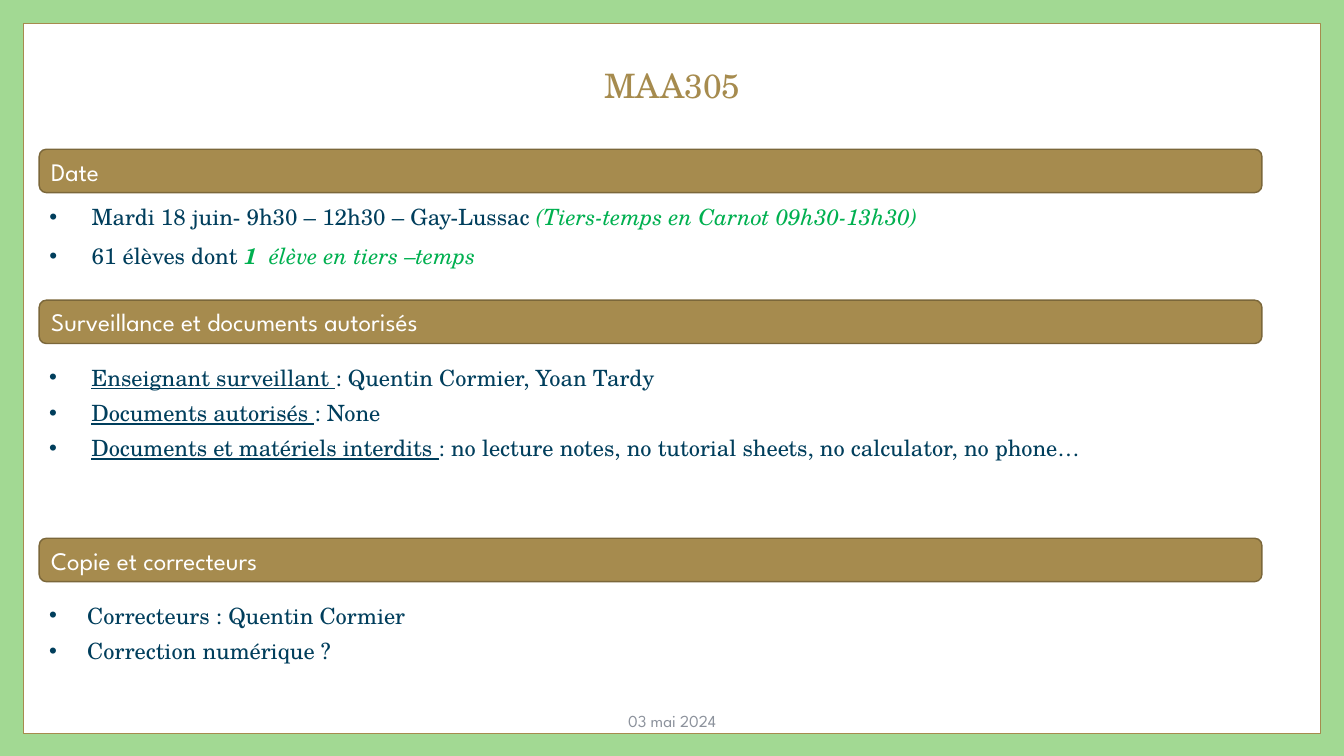
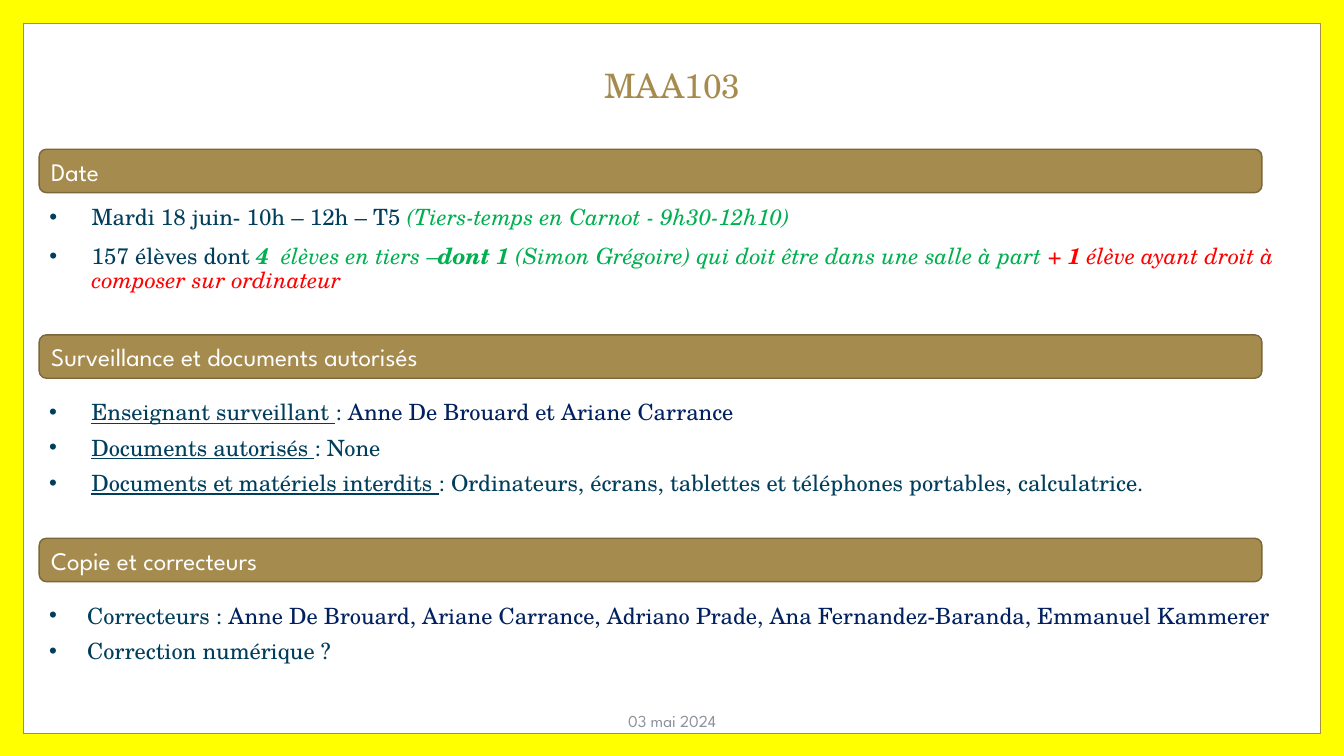
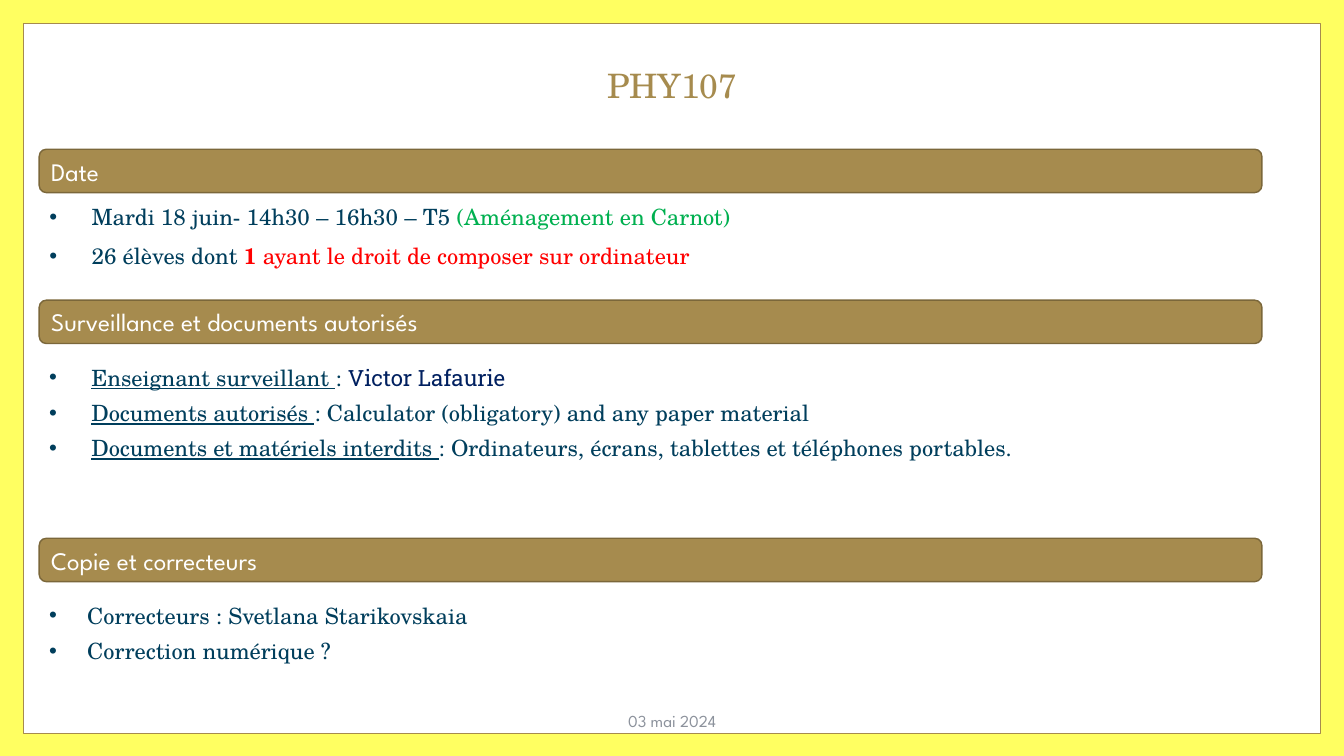
import pptx
import pptx.dml.color
import pptx.enum.shapes
import pptx.enum.text
import pptx.util
from dataclasses import dataclass
from lxml import etree
from typing import NamedTuple

Pt = pptx.util.Pt
ALIGN = pptx.enum.text.PP_ALIGN
ANCHOR = pptx.enum.text.MSO_ANCHOR
SHAPE = pptx.enum.shapes.MSO_SHAPE

COLORS = {
    "gold": "A68B4E",
    "gold_dark": "7B673A",
    "white": "FFFFFF",
    "ink": "003E5C",
    "navy": "002060",
    "green": "00B050",
    "red": "FF0000",
    "grey": "8C929C",
}
SERIF = "TeX Gyre Schola"
SANS = "League Spartan"
BASE = {"name": SERIF, "size": Pt(16), "color": "ink"}
STYLES = {
    "plain": {},
    "label": {"underline": True},
    "navy": {"color": "navy"},
    "navy_slab": {"color": "navy", "name": "Roboto Slab"},
    "green": {"color": "green"},
    "green_it": {"color": "green", "italic": True},
    "green_bold_it": {"color": "green", "italic": True, "bold": True},
    "red": {"color": "red"},
    "red_bold": {"color": "red", "bold": True},
    "red_it": {"color": "red", "italic": True},
    "red_bold_it": {"color": "red", "italic": True, "bold": True},
    "title": {"size": Pt(24), "color": "gold"},
    "band": {"name": SANS, "size": Pt(18), "color": "white"},
    "footer": {"name": SANS, "size": Pt(12), "color": "grey"},
}


class Box(NamedTuple):
    left: float
    top: float
    width: float
    height: float

    def lengths(self) -> list:
        return [Pt(v) for v in self]


class Run(NamedTuple):
    text: str
    style: str = "plain"


@dataclass
class Section:
    heading: str
    drop: float
    left: float
    width: float
    height: float
    margins: tuple
    indent: float
    space: float
    line: float


@dataclass
class Exam:
    code: str
    border: str
    watch_top: float
    date: list
    watch: list
    marking: list


TEXT_MARGINS = (7.2, 3.6, 7.2, 3.6)
DATE = Section("Date", 41, 35.3, 903.6, 124.6, (0, 0, 0, 3.6), 30.2, 10, 0.9)
WATCH = Section("Surveillance et documents autorisés", 41.9, 28, 903.6, 77.8,
                TEXT_MARGINS, 30.2, 6, 1.0)
MARKING = Section("Copie et correcteurs", 41.9, 28, 889.2, 51.8,
                  TEXT_MARGINS, 27.2, 6, 1.0)
DATE_TOP = 106.6
MARKING_TOP = 384.5
FRAME = Box(17, 16.8, 926, 506.9)
TITLE = Box(66.2, 16.8, 828, 91.4)
FOOTER = Box(318.2, 500.4, 324, 28.8)


def rgb(value: str) -> pptx.dml.color.RGBColor:
    return pptx.dml.color.RGBColor.from_string(value)


def add_run(p, run: Run) -> None:
    r = p.add_run()
    r.text = run.text
    for key, value in {**BASE, **STYLES[run.style]}.items():
        if key == "color":
            r.font.color.rgb = rgb(COLORS[value])
        else:
            setattr(r.font, key, value)


def set_frame(tf, **values) -> None:
    for key, value in {"word_wrap": True, **values}.items():
        setattr(tf, key, value)


def add_panel(s, shape: int, box: Box, fill: str, line: str, weight: float):
    sp = s.shapes.add_shape(shape, *box.lengths())
    sp.shadow.inherit = False
    sp.fill.solid()
    sp.fill.fore_color.rgb = rgb(COLORS[fill])
    sp.line.color.rgb = rgb(COLORS[line])
    sp.line.width = Pt(weight)
    return sp


def add_bullet(p, indent: float) -> None:
    pPr = p._p.get_or_add_pPr()
    pPr.set("marL", str(Pt(indent)))
    pPr.set("indent", str(-Pt(indent)))
    ns = pptx.oxml.ns.qn
    etree.SubElement(pPr, ns("a:buFont")).set("typeface", "Arial")
    etree.SubElement(pPr, ns("a:buChar")).set("char", "•")


def add_section(s, section: Section, top: float, items: list) -> None:
    sp = add_panel(s, SHAPE.ROUNDED_RECTANGLE, Box(28, top, 873.4, 31),
                   "gold", "gold_dark", 1)
    set_frame(sp.text_frame, vertical_anchor=ANCHOR.MIDDLE)
    p = sp.text_frame.paragraphs[0]
    p.alignment = ALIGN.LEFT
    add_run(p, Run(section.heading, "band"))

    box = Box(section.left, top + section.drop, section.width, section.height)
    tf = s.shapes.add_textbox(*box.lengths()).text_frame
    sides = ("margin_left", "margin_top", "margin_right", "margin_bottom")
    set_frame(tf, **{k: Pt(v) for k, v in zip(sides, section.margins)})
    for i, runs in enumerate(items):
        p = tf.add_paragraph() if i else tf.paragraphs[0]
        add_bullet(p, section.indent)
        p.line_spacing = section.line
        p.space_before = Pt(section.space if i else 0)
        for run in runs:
            add_run(p, run)


def add_exam(prs, exam: Exam) -> None:
    s = prs.slides.add_slide(prs.slide_layouts[5])
    s.background.fill.solid()
    s.background.fill.fore_color.rgb = rgb(exam.border)
    frame = add_panel(s, SHAPE.RECTANGLE, FRAME, "white", "gold", 0.75)
    frame.element.getparent().insert(2, frame.element)

    title = s.shapes.title
    title.left, title.top, title.width, title.height = TITLE.lengths()
    set_frame(title.text_frame, vertical_anchor=ANCHOR.MIDDLE)
    p = title.text_frame.paragraphs[0]
    p.alignment = ALIGN.CENTER
    p.line_spacing = 0.9
    add_run(p, Run(exam.code, "title"))

    add_section(s, DATE, DATE_TOP, exam.date)
    add_section(s, WATCH, exam.watch_top, exam.watch)
    add_section(s, MARKING, MARKING_TOP, exam.marking)

    tf = s.shapes.add_textbox(*FOOTER.lengths()).text_frame
    set_frame(tf, vertical_anchor=ANCHOR.MIDDLE)
    tf.paragraphs[0].alignment = ALIGN.CENTER
    add_run(tf.paragraphs[0], Run("03 mai 2024", "footer"))


def watch_items(teacher: Run, allowed: str, banned: str) -> list:
    pairs = (("Enseignant surveillant ", teacher),
             ("Documents autorisés ", Run(allowed)),
             ("Documents et matériels interdits ", Run(banned)))
    return [[Run(label, "label"), Run(": "), run] for label, run in pairs]


def marking_items(markers: Run) -> list:
    return [[Run("Correcteurs : "), markers], [Run("Correction numérique ?")]]


EXAMS = [
    Exam(
        "MAA305", "A2D993", 214.4,
        [[Run("Mardi 18 juin- 9h30 – 12h30 – Gay-Lussac "),
          Run("(Tiers-temps en Carnot 09h30-13h30)", "green_it")],
         [Run("61 élèves dont"), Run(" 1", "green_bold_it"),
          Run("  élève en tiers –temps", "green_it")]],
        watch_items(
            Run("Quentin Cormier, Yoan Tardy"), "None",
            "no lecture notes, no tutorial sheets, no calculator, no phone…"),
        marking_items(Run("Quentin Cormier")),
    ),
    Exam(
        "MAA103", "FFFF00", 239.2,
        [[Run("Mardi 18 juin- 10h – 12h – T5 "),
          Run("(Tiers-temps en Carnot - 9h30-12h10)", "green_it")],
         [Run("157 élèves dont "), Run("4", "green_bold_it"),
          Run("  élèves en tiers –", "green_it"),
          Run("dont 1", "green_bold_it"),
          Run(" (Simon Grégoire) qui doit être dans une salle à part",
              "green_it"),
          Run(" + ", "red_it"), Run("1", "red_bold_it"),
          Run(" élève ayant droit à composer sur ordinateur", "red_it")]],
        watch_items(
            Run("Anne De Brouard et Ariane Carrance", "navy"), "None",
            "Ordinateurs, écrans, tablettes et téléphones portables, "
            "calculatrice."),
        marking_items(Run(
            "Anne De Brouard, Ariane Carrance, Adriano Prade, "
            "Ana Fernandez-Baranda, Emmanuel Kammerer", "navy")),
    ),
    Exam(
        "PHY107", "FFFF61", 214.4,
        [[Run("Mardi 18 juin- 14h30 – 16h30 – T5 "),
          Run("(Aménagement en Carnot)", "green")],
         [Run("26 élèves dont "), Run("1", "red_bold"),
          Run(" ayant le droit de composer sur ordinateur", "red")]],
        watch_items(
            Run("Victor Lafaurie", "navy_slab"),
            "Calculator (obligatory) and any paper material",
            "Ordinateurs, écrans, tablettes et téléphones portables."),
        marking_items(Run("Svetlana Starikovskaia")),
    ),
]


def main() -> None:
    prs = pptx.Presentation()
    prs.slide_width, prs.slide_height = Pt(960), Pt(540)
    for exam in EXAMS:
        add_exam(prs, exam)
    prs.save("out.pptx")


if __name__ == "__main__":
    main()
